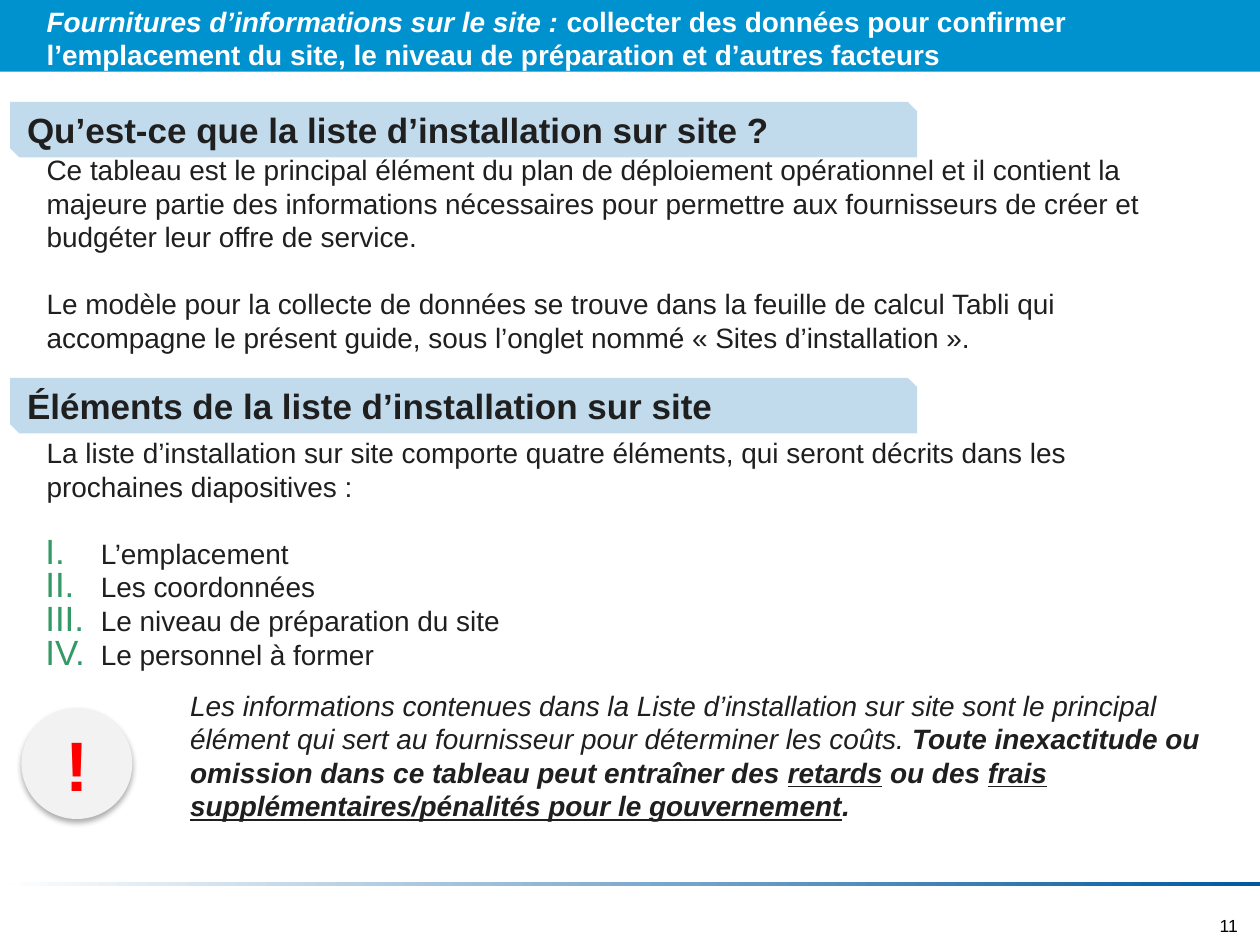
from dataclasses import dataclass

from lxml.etree import SubElement
from pptx import Presentation
from pptx.dml.color import RGBColor
from pptx.enum.shapes import MSO_SHAPE
from pptx.enum.text import MSO_ANCHOR, MSO_AUTO_SIZE, PP_ALIGN
from pptx.oxml.ns import qn
from pptx.util import Inches, Pt


@dataclass(frozen=True)
class Theme:
    font: str = "Arial"
    band: str = "0091CF"
    rule: str = "00589F"
    label: str = "C2DBEC"
    badge: str = "F2F2F2"
    ink: str = "1F1F1F"
    white: str = "FFFFFF"
    black: str = "000000"
    alert: str = "FF0000"
    numeral: str = "339966"
    page_size: int = 10
    body_size: int = 16
    label_size: int = 20
    alert_size: int = 40
    line_spacing: float = 1.0
    paragraph_gap: float = 19.2


@dataclass(frozen=True)
class Box:
    left: float
    top: float
    width: float
    height: float

    def emu(self) -> list[int]:
        return [Inches(v) for v in (self.left, self.top, self.width, self.height)]


@dataclass(frozen=True)
class Span:
    text: str
    bold: bool = False
    italic: bool = False
    underline: bool = False


@dataclass(frozen=True)
class Para:
    spans: tuple[Span, ...]
    numbered: bool = False
    gap: bool = False


THEME = Theme()
WIDTH, HEIGHT = 10, 7.5
MARGIN = 0.17
BODY_WIDTH, BODY_HEIGHT = 9.33, 1.62
INDENT, LIST_INDENT, LIST_HANGING = 0.2, 0.63, -0.44


def rgb(value: str) -> RGBColor:
    return RGBColor.from_string(value)


def add_block(slide, kind, box: Box, fill: str):
    block = slide.shapes.add_shape(kind, *box.emu())
    block.shadow.inherit = False
    block.fill.solid()
    block.fill.fore_color.rgb = rgb(fill)
    block.line.fill.background()
    return block


def place(holder, box: Box) -> None:
    holder.left, holder.top, holder.width, holder.height = box.emu()


def format_font(font, size: float, color: str, span: Span) -> None:
    font.name, font.size = THEME.font, Pt(size)
    font.color.rgb = rgb(color)
    font.bold, font.italic, font.underline = span.bold, span.italic, span.underline


def set_bullet(paragraph, para: Para) -> None:
    props = paragraph._p.get_or_add_pPr()
    margin, first = (LIST_INDENT, LIST_HANGING) if para.numbered else (INDENT, 0)
    props.set("marL", str(Inches(margin)))
    props.set("indent", str(Inches(first)))
    if para.numbered:
        SubElement(SubElement(props, qn("a:buClr")), qn("a:srgbClr"), val=THEME.numeral)
        SubElement(props, qn("a:buSzPct"), val="125000")
        SubElement(props, qn("a:buAutoNum"), type="romanUcPeriod")
    else:
        SubElement(props, qn("a:buNone"))


def write_paragraphs(shape, paras: list[Para], color: str = THEME.ink) -> None:
    frame = shape.text_frame
    frame.word_wrap = True
    frame.auto_size = MSO_AUTO_SIZE.NONE
    frame.vertical_anchor = MSO_ANCHOR.MIDDLE
    frame.margin_left = frame.margin_right = frame.margin_top = frame.margin_bottom = 0
    for index, para in enumerate(paras):
        paragraph = frame.add_paragraph() if index else frame.paragraphs[0]
        set_bullet(paragraph, para)
        paragraph.alignment = PP_ALIGN.LEFT
        paragraph.line_spacing = THEME.line_spacing
        paragraph.space_before = Pt(THEME.paragraph_gap if para.gap else 0)
        paragraph.space_after = Pt(0)
        for span in para.spans:
            run = paragraph.add_run()
            run.text = span.text
            format_font(run.font, THEME.body_size, color, span)


def write_line(shape, text: str, size: float, color: str, align, bold: bool = True) -> None:
    frame = shape.text_frame
    frame.text = text
    frame.vertical_anchor = MSO_ANCHOR.MIDDLE
    paragraph = frame.paragraphs[0]
    paragraph.alignment = align
    format_font(paragraph.runs[0].font, size, color, Span(text, bold=bold))


def add_soft_shadow(shape) -> None:
    effects = shape._element.spPr.find(qn("a:effectLst"))
    shadow = SubElement(effects, qn("a:outerShdw"), blurRad=str(Pt(3.5)),
                        dist=str(Pt(2.2)), dir="5400000", rotWithShape="0")
    color = SubElement(shadow, qn("a:srgbClr"), val=THEME.black)
    SubElement(color, qn("a:alpha"), val="32000")


def draw_frame(slide) -> None:
    # Footer rule, title band and page number
    rule = add_block(slide, MSO_SHAPE.RECTANGLE, Box(0, 7, WIDTH, 0.03), THEME.rule)
    rule.fill.gradient()
    rule.fill.gradient_angle = 0
    for stop, position, color in zip(rule.fill.gradient_stops, (0, 1), (THEME.white, THEME.rule)):
        stop.position = position
        stop.color.rgb = rgb(color)
    add_block(slide, MSO_SHAPE.RECTANGLE, Box(0, 0, WIDTH, 0.57), THEME.band)
    page = slide.shapes.add_textbox(*Box(9.68, 7.26, 0.21, 0.17).emu())
    frame = page.text_frame
    frame.margin_left = frame.margin_right = frame.margin_top = frame.margin_bottom = 0
    write_line(page, "11", THEME.page_size, THEME.black, PP_ALIGN.LEFT, bold=False)
    frame.vertical_anchor = MSO_ANCHOR.TOP


def draw_section_label(slide, top: float, text: str) -> None:
    label = add_block(slide, MSO_SHAPE.SNIP_2_DIAG_RECTANGLE, Box(0.08, top, 7.2, 0.44), THEME.label)
    write_line(label, text, THEME.label_size, THEME.ink, PP_ALIGN.LEFT)


def draw_warning(slide) -> None:
    note = slide.shapes.add_textbox(*Box(1.31, 5.59, 8.3, 0.81).emu())
    write_paragraphs(note, [Para((
        Span("Les informations contenues dans la Liste d’installation sur site sont le principal élément "
             "qui sert au fournisseur pour déterminer les coûts. ", italic=True),
        Span("Toute inexactitude ou omission dans ce tableau peut entraîner des ", True, True),
        Span("retards", True, True, True),
        Span(" ou des ", True, True),
        Span("frais supplémentaires/pénalités pour le gouvernement", True, True, True),
        Span(".", True, True),
    ))])
    badge = add_block(slide, MSO_SHAPE.OVAL, Box(MARGIN, 5.62, 0.88, 0.88), THEME.badge)
    add_soft_shadow(badge)
    badge.text_frame.margin_left = badge.text_frame.margin_right = 0
    badge.text_frame.margin_top = badge.text_frame.margin_bottom = Inches(0.04)
    write_line(badge, "!", THEME.alert_size, THEME.alert, PP_ALIGN.CENTER)


def main() -> None:
    deck = Presentation()
    deck.slide_width, deck.slide_height = Inches(WIDTH), Inches(HEIGHT)
    slide = deck.slides.add_slide(deck.slide_layouts[3])
    title, definition, elements = list(slide.placeholders)

    draw_frame(slide)
    draw_section_label(slide, 0.81, "Qu’est-ce que la liste d’installation sur site ?")
    draw_section_label(slide, 3, "Éléments de la liste d’installation sur site")

    # Title and body text, brought in front of the band and labels
    place(title, Box(MARGIN, 0.01, WIDTH - MARGIN, 0.58))
    write_paragraphs(title, [Para((
        Span("Fournitures d’informations sur le site : ", True, True),
        Span("collecter des données pour confirmer l’emplacement du site, le niveau de préparation "
             "et d’autres facteurs", True),
    ))], THEME.white)
    place(definition, Box(MARGIN, 1.2, BODY_WIDTH, BODY_HEIGHT))
    write_paragraphs(definition, [
        Para((Span("Ce tableau est le principal élément du plan de déploiement opérationnel et il contient "
                   "la majeure partie des informations nécessaires pour permettre aux fournisseurs de créer "
                   "et budgéter leur offre de service."),)),
        Para((Span("Le modèle pour la collecte de données se trouve dans la feuille de calcul Tabli qui "
                   "accompagne le présent guide, sous l’onglet nommé « Sites d’installation »."),), gap=True),
    ])
    place(elements, Box(MARGIN, 3.58, BODY_WIDTH, BODY_HEIGHT))
    names = ["L’emplacement", "Les coordonnées", "Le niveau de préparation du site", "Le personnel à former"]
    write_paragraphs(elements, [
        Para((Span("La liste d’installation sur site comporte quatre éléments, qui seront décrits dans les "
                   "prochaines diapositives :"),)),
        *(Para((Span(name),), numbered=True, gap=i == 0) for i, name in enumerate(names)),
    ])
    for holder in (definition, elements, title):
        slide.shapes._spTree.append(holder._element)

    draw_warning(slide)
    deck.save("out.pptx")


if __name__ == "__main__":
    main()
